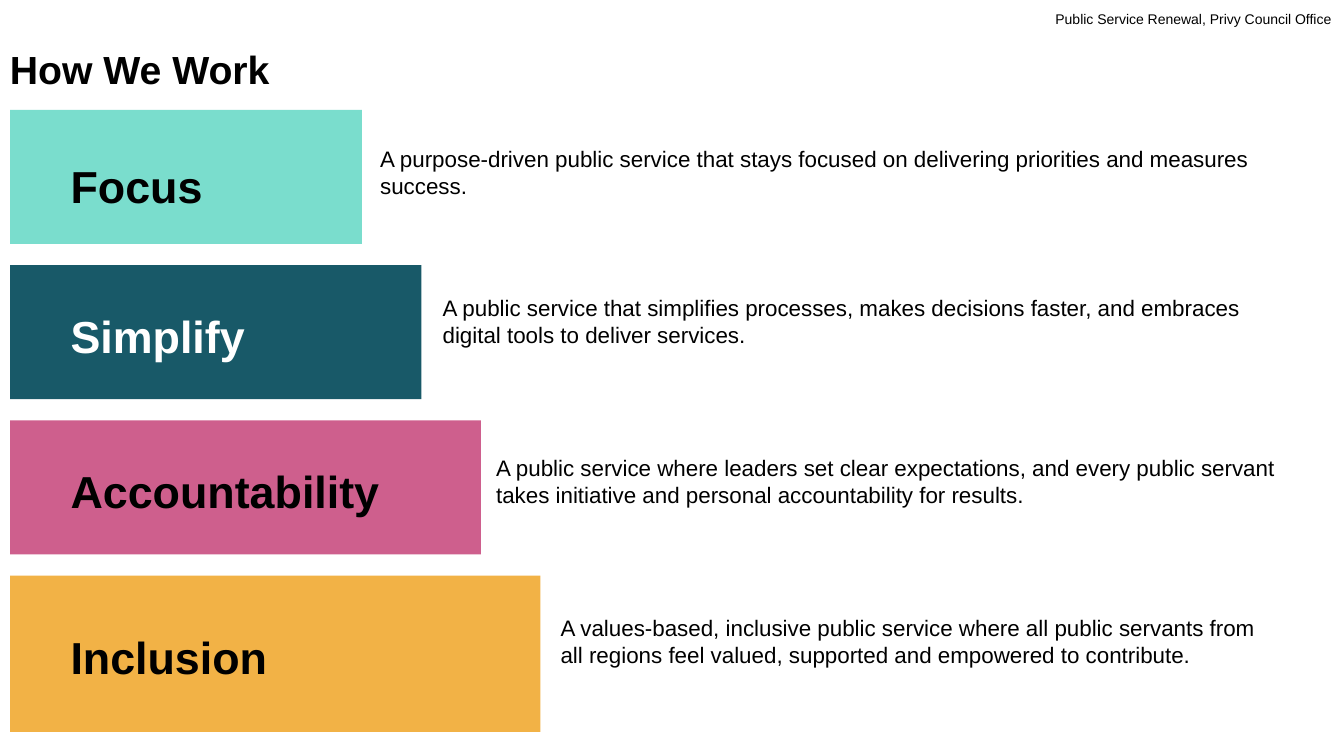
"""Build the "How We Work" slide: four widening bars with descriptions."""
from pptx import Presentation, util as u
from pptx.dml.color import RGBColor
from pptx.enum import shapes, text

WIDTH, HEIGHT = 13.33, 7.5
LEFT, TOP, PITCH = 0.1, 1.09, 1.54
BAR_WIDTH, BAR_STEP, BAR_HEIGHT = 3.49, 0.59, 1.33

# label, fill, font colour, extra height, label drop, description box, description
PRINCIPLES = [
    ("Focus", "7ADDCD", "000000", 0, 0.17, (3.77, 1.2, 8.75, 1.26),
     "A purpose-driven public service that stays focused on delivering "
     "priorities and measures success."),
    ("Simplify", "185968", "FFFFFF", 0, 0.06, (4.39, 2.72, 8.34, 1.18),
     "A public service that simplifies processes, makes decisions faster, "
     "and embraces digital tools to deliver services."),
    ("Accountability", "CE5F8D", "000000", 0, 0.06, (4.92, 4.23, 7.82, 1.33),
     "A public service where leaders set clear expectations, and every public "
     "servant takes initiative and personal accountability for results."),
    ("Inclusion", "F2B246", "000000", 0.22, 0.06, (5.56, 5.82, 7.07, 1.33),
     "A values-based, inclusive public service where all public servants from "
     "all regions feel valued, supported and empowered to contribute."),
]


def rgb(hex_code):
    """Turn a hex string into a colour."""
    return RGBColor.from_string(hex_code)


def inches(box):
    """Convert a box of inches to lengths."""
    return [u.Inches(v) for v in box]


def write(s, content, size, color="000000", bold=False, insets=(0.1, 0.05, 0.1, 0.05),
          anchor=text.MSO_ANCHOR.TOP, wrap=True):
    """Fill a shape with one left-aligned paragraph and return it."""
    tf = s.text_frame
    tf.text = content
    tf.word_wrap = wrap
    tf.vertical_anchor = anchor
    tf.margin_left, tf.margin_top, tf.margin_right, tf.margin_bottom = inches(insets)
    p = tf.paragraphs[0]
    p.alignment = text.PP_ALIGN.LEFT
    font = p.runs[0].font
    font.name, font.size, font.bold = "Arial", u.Pt(size), bold
    font.color.rgb = rgb(color)
    return p


def add_text(slide, box, content, size, **style):
    """Add a text box and return its paragraph."""
    return write(slide.shapes.add_textbox(*inches(box)), content, size, **style)


def add_bar(slide, box, fill, label, color, drop):
    """Add a coloured bar with its bold label."""
    s = slide.shapes.add_shape(shapes.MSO_SHAPE.RECTANGLE, *inches(box))
    s.shadow.inherit = False
    s.fill.solid()
    s.fill.fore_color.rgb = rgb(fill)
    s.line.fill.background()
    write(s, label, 32, color, True, (0.6, 0.05 + drop, 0.1, 0.05),
          text.MSO_ANCHOR.MIDDLE)


def main():
    """Build and save the slide."""
    prs = Presentation()
    prs.slide_width, prs.slide_height = inches((WIDTH, HEIGHT))
    slide = prs.slides.add_slide(prs.slide_layouts[6])
    title = add_text(slide, (0, 0.42, 9.99, 0.4), "How We Work", 28, bold=True,
                     insets=(0.1, 0.08, 0.1, 0.05))
    title.line_spacing = 0.9
    for row, (label, fill, color, extra, drop, box, description) in enumerate(PRINCIPLES):
        bar = (LEFT, TOP + row * PITCH, BAR_WIDTH + row * BAR_STEP, BAR_HEIGHT + extra)
        add_bar(slide, bar, fill, label, color, drop)
        add_text(slide, box, description, 16, insets=(0, 0, 0, 0.25),
                 anchor=text.MSO_ANCHOR.MIDDLE)
    add_text(slide, (10.37, 0.06, 2.97, 0.27),
             "Public Service Renewal, Privy Council Office", 10, wrap=False)
    prs.save("out.pptx")


if __name__ == "__main__":
    main()
